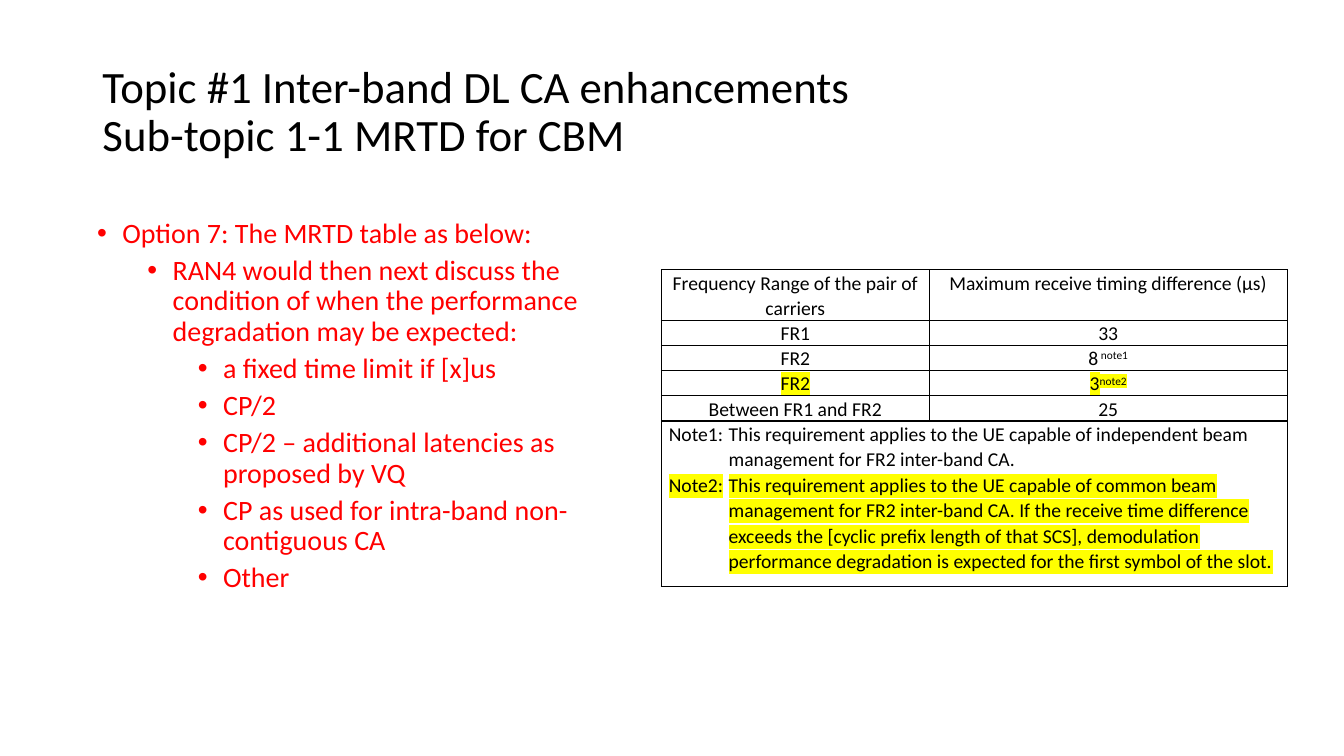
from lxml.etree import SubElement
from pptx import Presentation
from pptx.dml.color import RGBColor
from pptx.enum.text import MSO_ANCHOR as ANCHOR, PP_ALIGN as ALIGN
from pptx.oxml.ns import qn
from pptx.util import Emu, Pt

PX = 9525
FONT = "Calibri"
BLACK, RED, YELLOW = "000000", "FF0000", "FFFF00"

TITLE = "Topic #1 Inter-band DL CA enhancements\vSub-topic 1-1 MRTD for CBM"

# Level and wording of each bullet
BULLETS = [
    (2, "Option 7: The MRTD table as below:"),
    (3, "RAN4 would then next discuss the condition of when the performance "
        "degradation may be expected:"),
    (4, "a fixed time limit if [x]us"),
    (4, "CP/2"),
    (4, "CP/2 – additional latencies as proposed by VQ"),
    (4, "CP as used for intra-band non-contiguous CA"),
    (4, "Other"),
]

# Frequency range, timing difference, superscript, highlight
LIMITS = [
    ("Frequency Range of the pair of carriers",
     "Maximum receive timing difference (µs)", "", None),
    ("FR1", "33", "", None),
    ("FR2", "8", " note1", None),
    ("FR2", "3", "note2", YELLOW),
    ("Between FR1 and FR2", "25", "", None),
]
NOTES = [
    ("Note1:\tThis requirement applies to the UE capable of independent beam "
     "management for FR2 inter-band CA.", None),
    ("Note2:\tThis requirement applies to the UE capable of common beam "
     "management for FR2 inter-band CA. If the receive time difference exceeds "
     "the [cyclic prefix length of that SCS], demodulation performance "
     "degradation is expected for the first symbol of the slot.", YELLOW),
]


def px(n):
    return Emu(n * PX)


def rgb(value):
    return RGBColor.from_string(value)


def set_attrs(obj, values):
    for name, value in values.items():
        setattr(obj, name, value)


def place(shape, box):
    set_attrs(shape, dict(zip(("left", "top", "width", "height"), map(px, box))))


def add_run(p, text, size, color=BLACK, highlight=None, raised=False):
    r = p.add_run()
    r.text = text
    set_attrs(r.font, {"size": Pt(size), "name": FONT})
    r.font.color.rgb = rgb(color)
    rPr = r.font._element
    if raised:
        rPr.set("baseline", "30000")
    if highlight:
        mark = SubElement(rPr, qn("a:highlight"))
        SubElement(mark, qn("a:srgbClr"), val=highlight)
        rPr.find(qn("a:latin")).addprevious(mark)


def set_indent(p, left, hanging):
    pPr = p._p.get_or_add_pPr()
    pPr.set("marL", str(px(left)))
    pPr.set("indent", str(px(-hanging)))
    return pPr


def add_title(s, box):
    title = s.shapes.title
    place(title, box)
    tf = title.text_frame
    set_attrs(tf, {"word_wrap": True, "vertical_anchor": ANCHOR.MIDDLE,
                   "text": TITLE})
    p = tf.paragraphs[0]
    set_attrs(p, {"alignment": ALIGN.LEFT, "line_spacing": 0.9})
    for r in p.runs:
        set_attrs(r.font, {"size": Pt(32), "name": FONT})
        r.font.color.rgb = rgb(BLACK)


def add_bullets(s, box):
    tf = s.shapes.add_textbox(*map(px, box)).text_frame
    tf.word_wrap = True
    for i, (level, text) in enumerate(BULLETS):
        p = tf.add_paragraph() if i else tf.paragraphs[0]
        set_attrs(p, {"level": level, "line_spacing": 0.9,
                      "space_before": Pt(5 if i else 0)})
        pPr = set_indent(p, 24 + 48 * level, 24)
        SubElement(pPr, qn("a:buFont"), typeface="Arial")
        SubElement(pPr, qn("a:buChar"), char="•")
        add_run(p, text, 20, RED)


def style_cell(cell):
    set_attrs(cell, {"margin_left": px(7), "margin_right": px(7),
                     "margin_top": 0, "margin_bottom": 0})
    tcPr = cell._tc.get_or_add_tcPr()
    for side in "LRTB":
        ln = SubElement(tcPr, qn("a:ln" + side), w=str(Pt(1)))
        fill = SubElement(ln, qn("a:solidFill"))
        SubElement(fill, qn("a:srgbClr"), val=BLACK)
    cell.fill.background()


def add_limits_table(s, box):
    x, y, w, h = box
    row_h, notes_h = 22, 158
    table = s.shapes.add_table(len(LIMITS) + 1, 2, *map(px, box)).table
    set_attrs(table, {"first_row": False, "horz_banding": False})
    for col, width in zip(table.columns, (255, w - 255)):
        col.width = px(width)
    for row in table.rows:
        row.height = px(row_h)
    table.rows[0].height = px(h - notes_h - row_h * (len(LIMITS) - 1))
    table.rows[len(LIMITS)].height = px(notes_h)
    for cell in table.iter_cells():
        style_cell(cell)

    # Frequency ranges and their limits
    for i, (band, limit, note, highlight) in enumerate(LIMITS):
        for j, text in enumerate((band, limit)):
            p = table.cell(i, j).text_frame.paragraphs[0]
            set_attrs(p, {"alignment": ALIGN.CENTER, "line_spacing": 1.07})
            add_run(p, text, 14, highlight=highlight)
            if j and note:
                add_run(p, note, 14, highlight=highlight, raised=True)

    # Notes across both columns
    notes = table.cell(len(LIMITS), 0)
    notes.merge(table.cell(len(LIMITS), 1))
    tf = notes.text_frame
    for i, (text, highlight) in enumerate(NOTES):
        p = tf.add_paragraph() if i else tf.paragraphs[0]
        p.line_spacing = 1.07
        set_indent(p, 57, 57)
        add_run(p, text, 14, highlight=highlight)


def main():
    prs = Presentation()
    set_attrs(prs, {"slide_width": px(1280), "slide_height": px(720)})
    s = prs.slides.add_slide(prs.slide_layouts[5])
    add_title(s, (88, 38, 1104, 139))
    add_bullets(s, (-13, 204, 634, 457))
    add_limits_table(s, (630, 257, 596, 290))
    prs.save("out.pptx")


if __name__ == "__main__":
    main()
